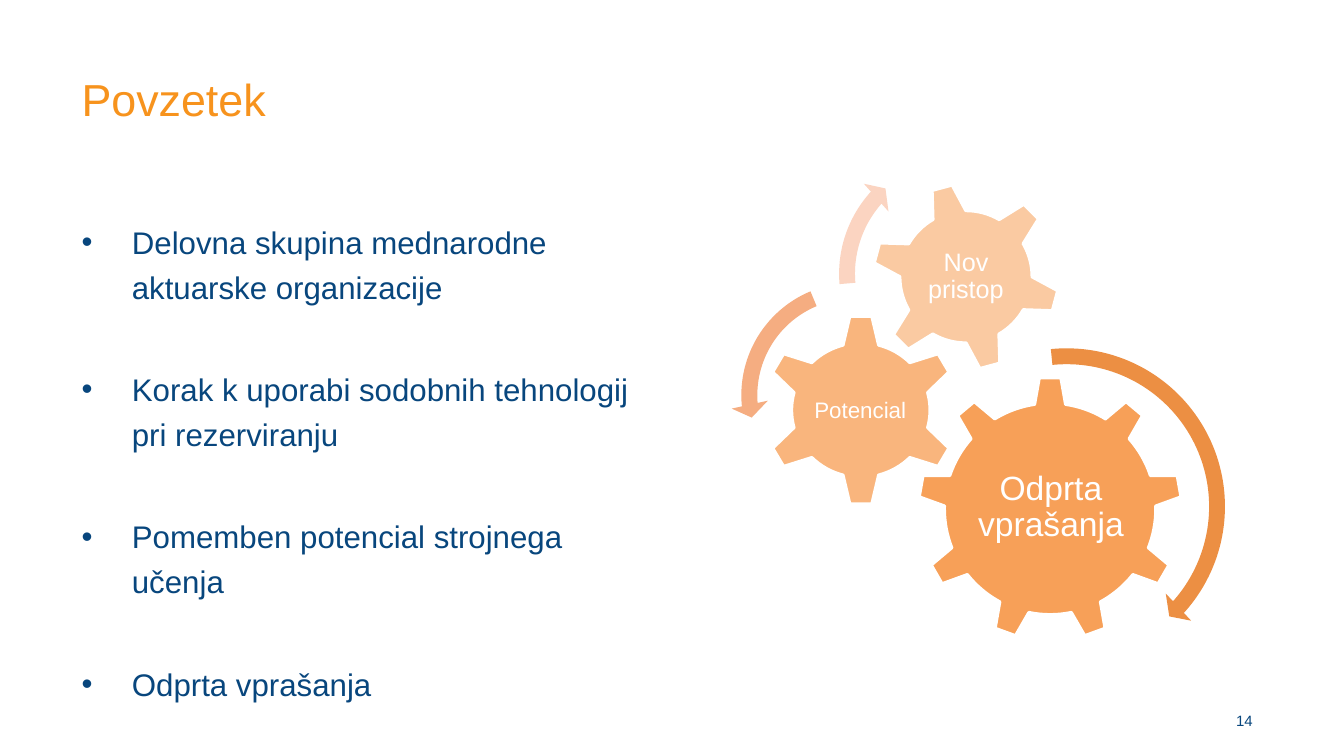
from lxml.etree import SubElement
from pptx import Presentation
from pptx.dml.color import RGBColor
from pptx.enum.shapes import MSO_SHAPE
from pptx.enum.text import MSO_ANCHOR, MSO_AUTO_SIZE, PP_ALIGN
from pptx.oxml.ns import qn
from pptx.util import Cm, Pt

COLOURS = {
    "heading": "F7931D",
    "body": "08467D",
    "gear": "F79646",
    "white": "FFFFFF",
    "questions_arrow": "EC8F43",
    "potential_arrow": "F5AD81",
    "approach_arrow": "FBD4C1",
}
FONT = "Arial"

# kind, place, rotation, opacity in percent, label, label place, label size
GEARS = [
    (MSO_SHAPE.GEAR_9, (23.14, 9.5, 6.65, 6.65), 0, 90,
     "Odprta vprašanja", (24.49, 11.07, 3.99, 3.43), 24),
    (MSO_SHAPE.GEAR_6, (19.23, 7.92, 4.93, 4.83), 0, 70,
     "Potencial", (20.45, 9.17, 2.46, 2.39), 16),
    (MSO_SHAPE.GEAR_6, (21.97, 4.6, 4.75, 4.75), 345, 50,
     "Nov pristop", (23.01, 5.64, 2.67, 2.67), 18),
]

# kind, left, top, side, colour, band and head widths in percent, angles in degrees
ARROWS = [
    (MSO_SHAPE.CIRCULAR_ARROW, 22.63, 8.51, 8.51, "questions_arrow",
     (4.7, 5.5), (4.98, 42, 264.22)),
    (MSO_SHAPE.LEFT_CIRCULAR_ARROW, 18.42, 6.86, 6.2, "potential_arrow",
     (6.5, 7.5), (7.17, 174.82, 247.3)),
    (MSO_SHAPE.CIRCULAR_ARROW, 20.88, 3.56, 6.68, "approach_arrow",
     (6, 7), (6.57, 221.9, 175.14)),
]

POINTS = [
    "Delovna skupina mednarodne aktuarske organizacije",
    "Korak k uporabi sodobnih tehnologij pri rezerviranju",
    "Pomemben potencial strojnega učenja",
    "Odprta vprašanja",
]


def colour(name):
    return RGBColor.from_string(COLOURS[name])


def assign(target, values):
    for name, value in values.items():
        setattr(target, name, value)


def box(left, top, width, height):
    return {"left": Cm(left), "top": Cm(top),
            "width": Cm(width), "height": Cm(height)}


class SummarySlide:
    def __init__(self, deck):
        self.slide = deck.slides.add_slide(deck.slide_layouts[1])
        self.gearwork = self.slide.shapes.add_group_shape().shapes

    def set_text(self, holder, lines, size, ink, paragraph_format, frame_format):
        frame = holder.text_frame
        assign(frame, {"word_wrap": True, "auto_size": MSO_AUTO_SIZE.NONE,
                       **frame_format})
        frame.text = "\n".join(lines)
        for paragraph in frame.paragraphs:
            assign(paragraph, paragraph_format)
            for run in paragraph.runs:
                assign(run.font, {"name": FONT, "size": Pt(size)})
                run.font.color.rgb = colour(ink)
        return frame.paragraphs

    def title(self, text, place):
        heading = self.slide.shapes.title
        assign(heading, box(*place))
        self.set_text(heading, [text], 32, "heading",
                      {"alignment": PP_ALIGN.LEFT},
                      {"vertical_anchor": MSO_ANCHOR.TOP})

    def bullets(self, points, place):
        body = self.slide.placeholders[1]
        assign(body, box(*place))
        items = self.set_text(body, points, 22.3, "body",
                              {"line_spacing": 1.2, "space_before": Pt(41)},
                              {"vertical_anchor": MSO_ANCHOR.TOP})
        items[0].space_before = Pt(4.5)
        for item in items:
            properties = item._p.get_or_add_pPr()
            properties.set("marL", str(Cm(1.27)))
            properties.set("indent", str(-Cm(1.27)))
            SubElement(properties, qn("a:buFont")).set("typeface", FONT)
            SubElement(properties, qn("a:buChar")).set("char", "•")

    def label(self, shapes, text, place, size, ink, paragraph_format, inset=None):
        holder = shapes.add_textbox(*box(*place).values())
        frame_format = {"vertical_anchor": MSO_ANCHOR.MIDDLE}
        if inset is not None:
            for side in ("left", "top", "right", "bottom"):
                frame_format[f"margin_{side}"] = Cm(inset)
        self.set_text(holder, [text], size, ink, paragraph_format, frame_format)

    def preset(self, kind, place, fill):
        shape = self.gearwork.add_shape(kind, *box(*place).values())
        shape.shadow.inherit = False
        shape.fill.solid()
        shape.fill.fore_color.rgb = colour(fill)
        return shape

    def gear(self, kind, place, rotation, opacity, text, text_place, size):
        gear = self.preset(kind, place, "gear")
        gear.rotation = rotation
        gear.line.color.rgb = colour("white")
        gear.line.width = Pt(2)
        tint = gear._element.spPr.find(qn("a:solidFill")).find(qn("a:srgbClr"))
        SubElement(tint, qn("a:alpha")).set("val", str(opacity * 1000))
        self.label(self.gearwork, text, text_place, size, "white",
                   {"alignment": PP_ALIGN.CENTER, "line_spacing": 0.9}, 0.05)

    def turning_arrow(self, kind, left, top, side, fill, widths, angles):
        arrow = self.preset(kind, (left, top, side, side), fill)
        arrow.line.fill.background()
        band, head = (width / 100 for width in widths)
        # Angles are stored in 60000ths of a degree, adjustments in 100000ths.
        turns = [angle * 0.6 for angle in angles]
        for index, value in enumerate([band, *turns, head]):
            arrow.adjustments[index] = value


def main():
    deck = Presentation()
    assign(deck, {"slide_width": Cm(33.87), "slide_height": Cm(19.05)})
    summary = SummarySlide(deck)
    for gear in GEARS:
        summary.gear(*gear)
    for arrow in ARROWS:
        summary.turning_arrow(*arrow)
    summary.label(summary.slide.shapes, "14", (30.35, 17.65, 1.47, 1.02), 10.7,
                  "body", {"alignment": PP_ALIGN.RIGHT})
    summary.title("Povzetek", (1.8, 1.68, 27.84, 3.2))
    summary.bullets(POINTS, (1.8, 5.31, 15.11, 12.09))
    deck.save("out.pptx")


if __name__ == "__main__":
    main()
